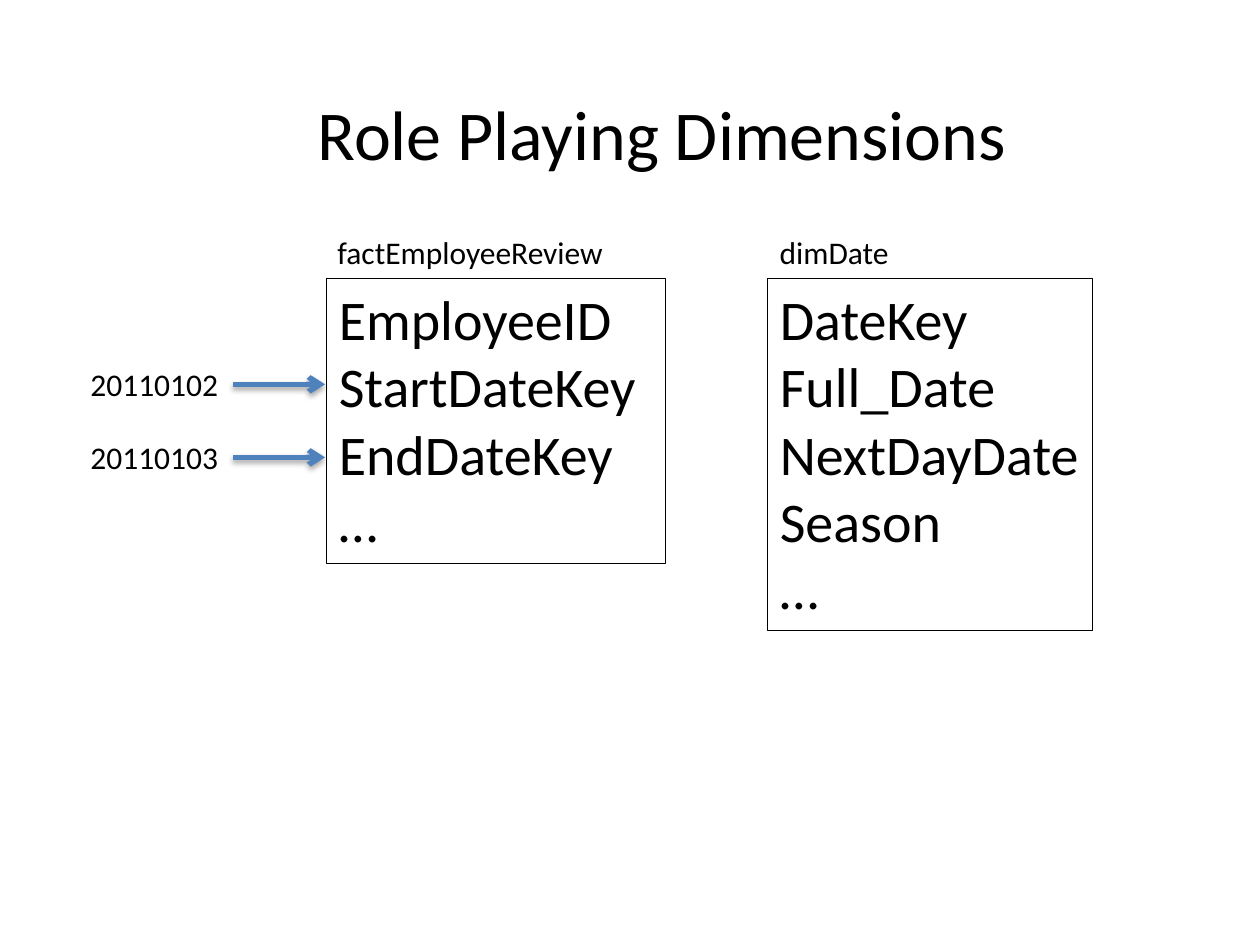
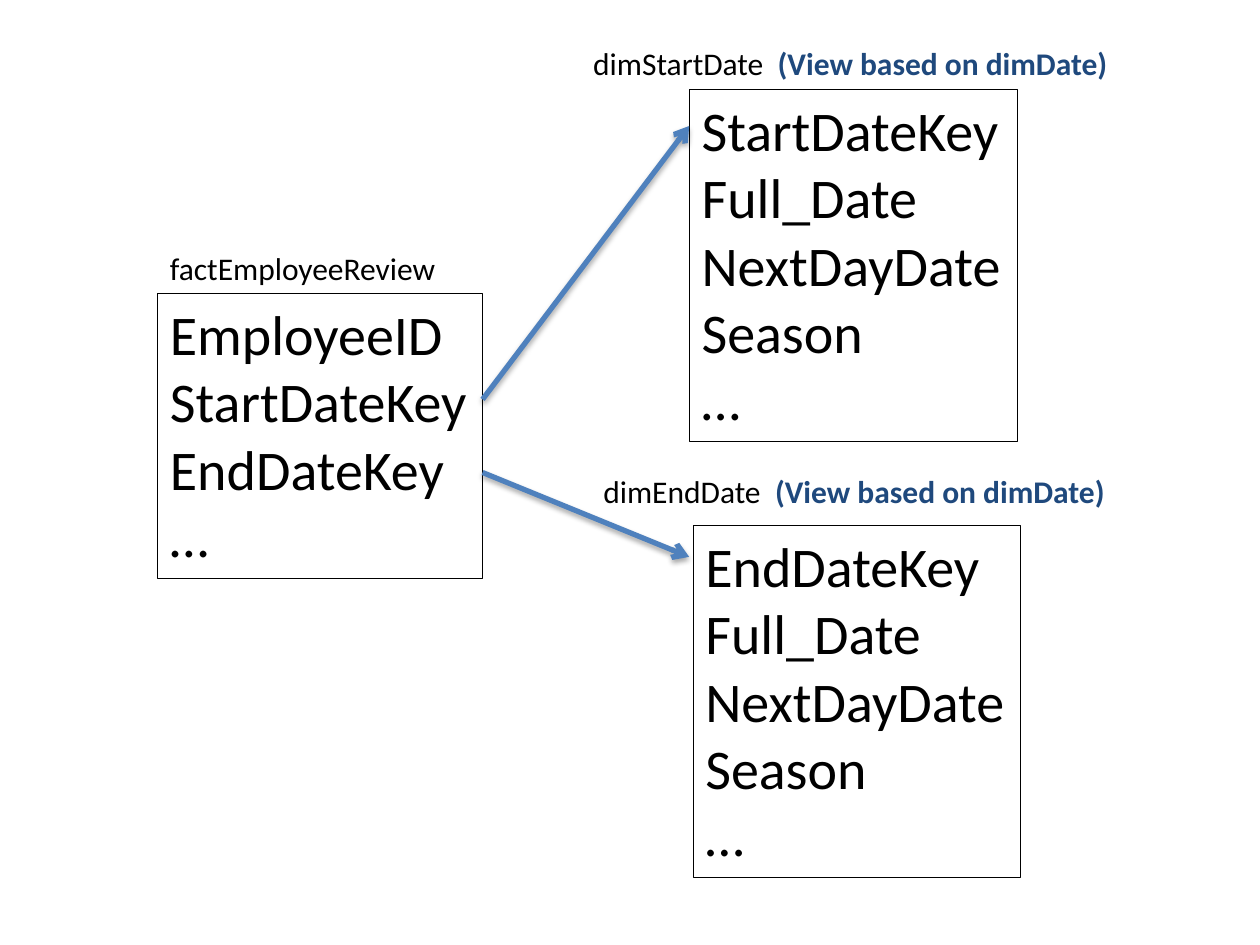
"""Build two slides on role playing dimensions in a star schema."""
from dataclasses import dataclass

from lxml.etree import SubElement
from pptx import Presentation
from pptx.dml.color import RGBColor
from pptx.enum.shapes import MSO_CONNECTOR, MSO_SHAPE
from pptx.enum.text import MSO_ANCHOR, MSO_AUTO_SIZE, PP_ALIGN
from pptx.oxml.ns import qn
from pptx.shapes.autoshape import Shape
from pptx.shapes.connector import Connector
from pptx.slide import Slide
from pptx.text.text import TextFrame
from pptx.util import Inches, Pt


@dataclass(frozen=True)
class Theme:
    """Hold the colours, font and sizes."""
    font: str = "Calibri"
    ink: RGBColor = RGBColor(0, 0, 0)
    note: RGBColor = RGBColor(0x1F, 0x49, 0x7D)
    arrow: RGBColor = RGBColor(0x4F, 0x81, 0xBD)
    title: Pt = Pt(40)
    field: Pt = Pt(32)
    label: Pt = Pt(18)
    edge: Pt = Pt(0.25)
    stroke: Pt = Pt(3)


@dataclass(frozen=True)
class Label:
    """Describe a small text with an optional bold note."""
    text: str
    left: float
    top: float
    width: float
    note: str = ""


@dataclass(frozen=True)
class Entity:
    """Describe a boxed list of fields."""
    fields: tuple[str, ...]
    left: float
    top: float
    width: float


@dataclass(frozen=True)
class Link:
    """Describe an arrow between two points."""
    start: tuple[float, float]
    end: tuple[float, float]


THEME = Theme()
LABEL_HIGH = 0.4
ROW, PAD = 0.53, 0.14
FACT = ("EmployeeID", "StartDateKey", "EndDateKey", "…")
DATE = ("Full_Date", "NextDayDate", "Season", "…")
VIEW = "(View based on dimDate)"

VALUES = (
    Label("20110102", 0.62, 2.85, 1.23),
    Label("20110103", 0.62, 3.43, 1.23),
)
VALUE_TIP = 2.58
ROLE_BOXES = (
    Entity(FACT, 2.59, 2.21, 2.69),
    Entity(("DateKey", *DATE), 6.09, 2.21, 2.58),
)
ROLE_NAMES = (
    Label("dimDate", 6.09, 1.8, 1.13),
    Label("factEmployeeReview", 2.58, 1.8, 2.33),
)
VIEW_BOXES = (
    Entity(FACT, 1.25, 2.33, 2.58),
    Entity(("StartDateKey", *DATE), 5.47, 0.71, 2.6),
    Entity(("EndDateKey", *DATE), 5.5, 4.17, 2.6),
)
VIEW_NAMES = (
    Label("dimStartDate  ", 4.61, 0.3, 4.32, VIEW),
    Label("dimEndDate  ", 4.69, 3.7, 4.22, VIEW),
    Label("factEmployeeReview", 1.25, 1.93, 2.33),
)
VIEW_LINKS = (
    Link((3.83, 3.17), (5.47, 1)),
    Link((3.83, 3.75), (5.47, 4.42)),
)


def style(frame: TextFrame, size: Pt, wrap: bool = False) -> None:
    """Format all text in a frame."""
    frame.word_wrap = wrap
    frame.auto_size = MSO_AUTO_SIZE.SHAPE_TO_FIT_TEXT
    frame.vertical_anchor = MSO_ANCHOR.TOP
    for para in frame.paragraphs:
        para.alignment = PP_ALIGN.LEFT
        for run in para.runs:
            run.font.name = THEME.font
            run.font.size = size
            run.font.color.rgb = THEME.ink


def add_title(slide: Slide, text: str) -> None:
    """Fill and place the title."""
    title = slide.shapes.title
    title.left, title.top = Inches(2.42), Inches(0.67)
    title.width, title.height = Inches(5.72), Inches(0.77)
    title.text_frame.text = text
    style(title.text_frame, THEME.title)


def add_label(slide: Slide, label: Label) -> Shape:
    """Draw a label and its note."""
    box = slide.shapes.add_textbox(
        Inches(label.left), Inches(label.top),
        Inches(label.width), Inches(LABEL_HIGH))
    frame = box.text_frame
    frame.text = label.text
    style(frame, THEME.label)
    if label.note:
        run = frame.paragraphs[0].add_run()
        run.text = label.note
        style(frame, THEME.label)
        run.font.bold = True
        run.font.color.rgb = THEME.note
    return box


def add_entity(slide: Slide, entity: Entity) -> None:
    """Draw a box with one field on each row."""
    high = len(entity.fields) * ROW + PAD
    box = slide.shapes.add_shape(
        MSO_SHAPE.RECTANGLE, Inches(entity.left), Inches(entity.top),
        Inches(entity.width), Inches(high))
    box.shadow.inherit = False
    box.fill.background()
    box.line.color.rgb = THEME.ink
    box.line.width = THEME.edge
    box.text_frame.text = "\n".join(entity.fields)
    style(box.text_frame, THEME.field, wrap=True)


def add_arrow(slide: Slide, link: Link) -> Connector:
    """Draw an arrow with a soft shadow."""
    points = (Inches(num) for num in (*link.start, *link.end))
    arrow = slide.shapes.add_connector(MSO_CONNECTOR.STRAIGHT, *points)
    arrow.line.color.rgb = THEME.arrow
    arrow.line.width = THEME.stroke
    SubElement(arrow.line._get_or_add_ln(), qn("a:tailEnd"), type="arrow")
    effects = SubElement(arrow._element.spPr, qn("a:effectLst"))
    shadow = SubElement(
        effects, qn("a:outerShdw"), blurRad="40000", dist="23000",
        dir="5400000", rotWithShape="0")
    black = SubElement(shadow, qn("a:srgbClr"), val="000000")
    SubElement(black, qn("a:alpha"), val="35000")
    return arrow


def add_value(slide: Slide, label: Label) -> None:
    """Draw a key value and its arrow to the fact."""
    box = add_label(slide, label)
    mid = label.top + LABEL_HIGH / 2
    arrow = add_arrow(
        slide, Link((label.left + label.width, mid), (VALUE_TIP, mid)))
    arrow.begin_connect(box, 3)


def add_model(slide: Slide, boxes: tuple[Entity, ...],
              names: tuple[Label, ...]) -> None:
    """Draw the boxes and their names."""
    for entity in boxes:
        add_entity(slide, entity)
    for label in names:
        add_label(slide, label)


def main() -> None:
    """Build and save the deck."""
    deck = Presentation()
    deck.slide_width, deck.slide_height = Inches(10), Inches(7.5)

    roles = deck.slides.add_slide(deck.slide_layouts[5])
    add_title(roles, "Role Playing Dimensions")
    add_model(roles, ROLE_BOXES, ROLE_NAMES)
    for value in VALUES:
        add_value(roles, value)

    views = deck.slides.add_slide(deck.slide_layouts[6])
    add_model(views, VIEW_BOXES, VIEW_NAMES)
    for link in VIEW_LINKS:
        add_arrow(views, link)

    deck.save("out.pptx")


if __name__ == "__main__":
    main()
